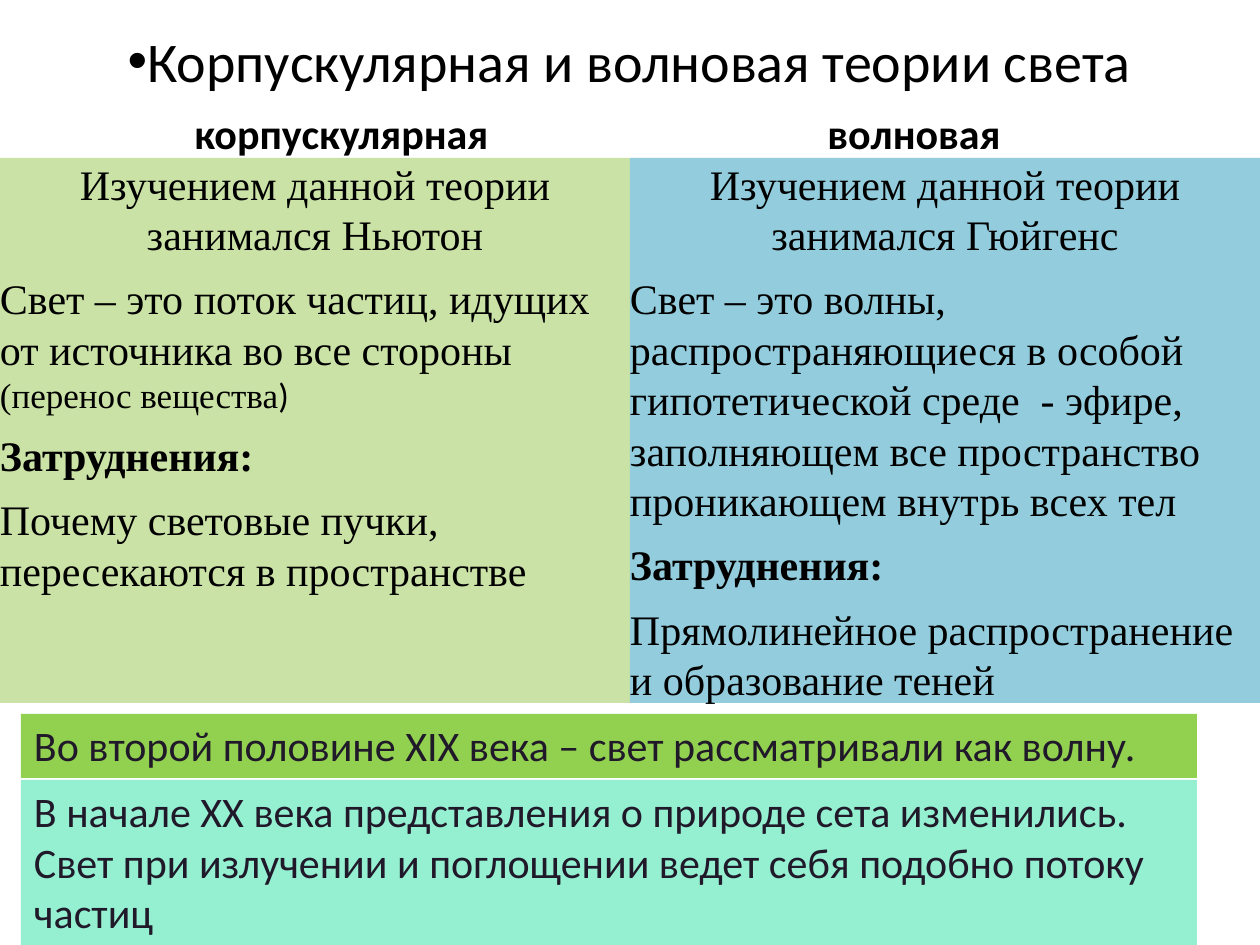
from lxml import etree
from pptx import Presentation
from pptx.dml.color import RGBColor
from pptx.enum.shapes import MSO_SHAPE
from pptx.enum.text import MSO_ANCHOR, PP_ALIGN
from pptx.oxml.ns import qn
from pptx.util import Pt

RECTANGLE = MSO_SHAPE.RECTANGLE
TOP, MIDDLE, BOTTOM = MSO_ANCHOR.TOP, MSO_ANCHOR.MIDDLE, MSO_ANCHOR.BOTTOM
LEFT, CENTER = PP_ALIGN.LEFT, PP_ALIGN.CENTER

THEME = {
    "sans": "Calibri", "serif": "Times New Roman",
    "title": 32, "body": 24, "small": 20,
    "black": "000000", "note": "201929",
    "particle": "CBE2A6", "wave": "93CDDD",
    "century_19": "92D050", "century_20": "95EFD1",
}
EMU_PER_PX = 914400 / 126


def px(length):
    return round(length * EMU_PER_PX)


def add_box(area, paragraphs, fill=None, anchor=TOP, align=LEFT, inset=(0, 0),
            font="sans", size="body", color="black", bold=False):
    """Add a box; each paragraph is a list of (text, run overrides)."""
    place = [px(length) for length in area]
    if fill:
        box = slide.shapes.add_shape(RECTANGLE, *place)
        box.shadow.inherit = False
        box.fill.solid()
        box.fill.fore_color.rgb = RGBColor.from_string(THEME[fill])
        box.line.fill.background()
    else:
        box = slide.shapes.add_textbox(*place)
    frame = box.text_frame
    frame.word_wrap = True
    frame.vertical_anchor = anchor
    frame.margin_left = frame.margin_right = px(inset[0])
    frame.margin_top = frame.margin_bottom = px(inset[1])
    for index, pieces in enumerate(paragraphs):
        para = frame.add_paragraph() if index else frame.paragraphs[0]
        para.alignment = align
        for text, changes in pieces:
            look = {"font": font, "size": size, "bold": bold, **changes}
            span = para.add_run()
            span.text = text
            span.font.name = THEME[look["font"]]
            span.font.size = Pt(THEME[look["size"]])
            span.font.bold = look["bold"]
            span.font.color.rgb = RGBColor.from_string(THEME[color])
    return box


deck = Presentation()
deck.slide_width, deck.slide_height = px(1260), px(945)
slide = deck.slides.add_slide(deck.slide_layouts[6])

theories = [
    ("корпускулярная", (63, 84, 557, 74), "particle", [
        [("Изучением данной теории занимался Ньютон", {})],
        [("Свет – это поток частиц, идущих от источника во все стороны ", {}),
         ("(перенос вещества", {"size": "small"}),
         (")", {"size": "small", "font": "sans"})],
        [("Затруднения:", {"bold": True})],
        [("Почему световые пучки, пересекаются в пространстве", {})],
    ]),
    ("волновая", (641, 84, 546, 74), "wave", [
        [("Изучением данной теории занимался Гюйгенс", {})],
        [("Свет – это волны, распространяющиеся в особой гипотетической среде  - эфире, "
          "заполняющем все пространство проникающем внутрь всех тел", {})],
        [("Затруднения:", {"bold": True})],
        [("Прямолинейное распространение и образование теней", {})],
    ]),
]
for column, (heading, heading_area, fill, paragraphs) in enumerate(theories):
    add_box(heading_area, [[(heading, {})]], anchor=BOTTOM, align=CENTER, bold=True)
    panel = add_box((column * 630, 158, 630, 545), paragraphs, fill, font="serif")
    first, *others = panel.text_frame.paragraphs
    first.alignment = CENTER
    for para in others:
        para.space_before = Pt(8)

title = add_box((63, 0, 1134, 120), [[("Корпускулярная и волновая теории света", {})]],
                anchor=MIDDLE, align=CENTER, size="title")
properties = title.text_frame.paragraphs[0]._p.get_or_add_pPr()
properties.set("marL", "0")
properties.set("indent", "0")
bullet_color = etree.SubElement(properties, qn("a:buClr"))
etree.SubElement(bullet_color, qn("a:srgbClr"), val=THEME["black"])
etree.SubElement(properties, qn("a:buFont"), typeface="Arial")
etree.SubElement(properties, qn("a:buChar"), char="•")

notes = [
    (714, 64, "century_19", [
        "Во второй половине XIX века – свет рассматривали как волну."]),
    (780, 165, "century_20", [
        "В начале XX века представления о природе сета изменились.",
        "Свет при излучении и поглощении ведет себя подобно потоку частиц"]),
]
for top, height, fill, lines in notes:
    add_box((21, top, 1176, height), [[(line, {})] for line in lines], fill,
            inset=(13, 6), color="note")

deck.save("out.pptx")
